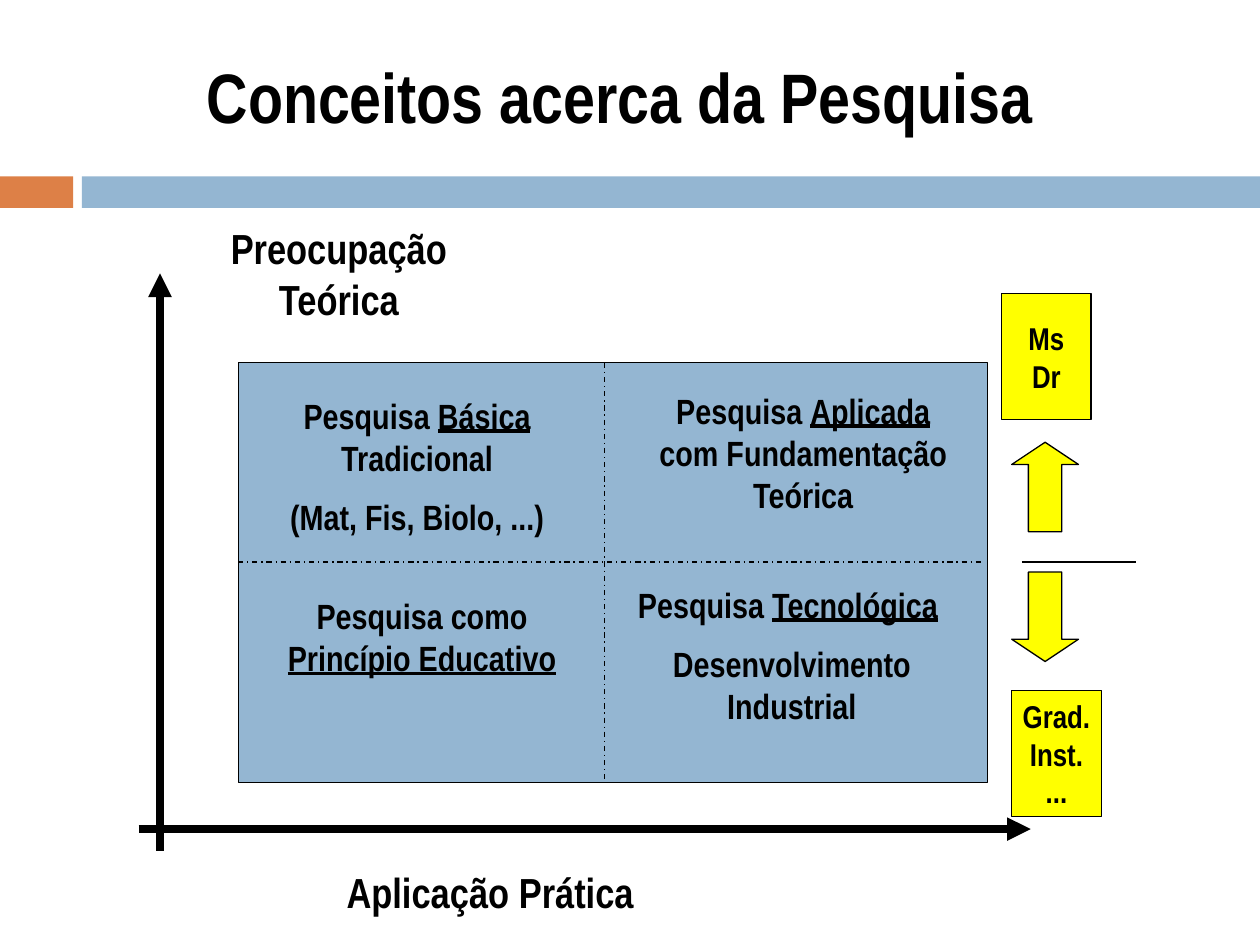
from pptx import Presentation
from pptx.dml.color import RGBColor
from pptx.enum.dml import MSO_LINE
from pptx.enum.shapes import MSO_CONNECTOR, MSO_SHAPE as SHAPE
from pptx.enum.text import MSO_ANCHOR, MSO_AUTO_SIZE, PP_ALIGN
from pptx.oxml.ns import qn
from pptx.util import Inches, Pt
from lxml.etree import SubElement

BLACK = RGBColor(0x00, 0x00, 0x00)
BLUE = RGBColor(0x94, 0xB6, 0xD2)
ORANGE = RGBColor(0xDD, 0x80, 0x47)
YELLOW = RGBColor(0xFF, 0xFF, 0x00)
COLS, ROWS = 100, 75  # the slide's grid


class SlideBuilder:
    """Holds the style and the current slide; lengths are columns and rows."""
    font, thin, thick = "Arial Narrow", 0.75, 4.5

    def __init__(self, prs):
        self.cell_w = prs.slide_width / COLS
        self.cell_h = prs.slide_height / ROWS
        self.slide = prs.slides.add_slide(prs.slide_layouts[5])
        self.shapes = self.slide.shapes

    def grid(self, *lengths):
        """Turn alternating columns and rows into slide lengths."""
        units = (self.cell_w, self.cell_h)
        return [round(n * units[i % 2]) for i, n in enumerate(lengths)]

    def fill_text(self, tf, paragraphs, size, align=PP_ALIGN.CENTER, gap=0):
        """Fill a text frame; text between underscores is underlined."""
        for i, text in enumerate(paragraphs):
            p = tf.add_paragraph() if i else tf.paragraphs[0]
            p.alignment = align
            p.space_before = Pt(gap if i else 0)
            p.font.name, p.font.size, p.font.bold = self.font, Pt(size), True
            p.font.color.rgb = BLACK
            for j, part in enumerate(text.split("_")):
                if part:
                    r = p.add_run()
                    r.text = part
                    if j % 2:
                        r.font.underline = True

    def title(self, text, *box):
        sp = self.shapes.title
        sp.left, sp.top, sp.width, sp.height = self.grid(*box)
        tf = sp.text_frame
        tf.auto_size = MSO_AUTO_SIZE.NONE
        tf.vertical_anchor = MSO_ANCHOR.MIDDLE
        self.fill_text(tf, [text], 40, PP_ALIGN.LEFT)

    def shape(self, kind, fill, *box, outlined=True, lines=()):
        sp = self.shapes.add_shape(kind, *self.grid(*box))
        sp.shadow.inherit = False
        sp.fill.solid()
        sp.fill.fore_color.rgb = fill
        if outlined:
            sp.line.color.rgb = BLACK
            sp.line.width = Pt(self.thin)
        else:
            sp.line.fill.background()
        if lines:
            tf = sp.text_frame
            tf.word_wrap = False
            tf.vertical_anchor = MSO_ANCHOR.MIDDLE
            self.fill_text(tf, lines, 18)
        return sp

    def block_arrow(self, kind, *box):
        sp = self.shape(kind, YELLOW, *box)
        sp.adjustments[0], sp.adjustments[1] = 0.5, 0.333

    def label(self, paragraphs, size, *box):
        sp = self.shapes.add_textbox(*self.grid(*box))
        tf = sp.text_frame
        tf.word_wrap = True
        self.fill_text(tf, paragraphs, size, gap=size / 2)

    def line(self, *ends, dashed=False, axis=False):
        cn = self.shapes.add_connector(MSO_CONNECTOR.STRAIGHT, *self.grid(*ends))
        cn.line.color.rgb = BLACK
        cn.line.width = Pt(self.thick if axis else self.thin)
        if dashed:
            cn.line.dash_style = MSO_LINE.DASH_DOT
        if axis:
            SubElement(cn.get_or_add_ln(), qn("a:tailEnd"), type="triangle")
        SubElement(cn._element.spPr, qn("a:effectLst"))


def main():
    prs = Presentation()
    prs.slide_width, prs.slide_height = Inches(10), Inches(7.5)
    s = SlideBuilder(prs)

    # Title and the band below it
    s.title("Conceitos acerca da Pesquisa", 15.4, 1.3, 77.4, 12.5)
    s.shape(SHAPE.RECTANGLE, ORANGE, 0, 14, 5.8, 2.5, outlined=False)
    s.shape(SHAPE.RECTANGLE, BLUE, 6.5, 14, 93.5, 2.5, outlined=False)

    # Matrix and its dividers
    left, top, width, height = 18.9, 28.8, 59.5, 33.3
    mid_x, mid_y = 48, 44.6
    s.shape(SHAPE.RECTANGLE, BLUE, left, top, width, height)
    s.line(mid_x, top, mid_x, top + height, dashed=True)
    s.line(left, mid_y, 78, mid_y, dashed=True)

    # Axes and their names
    s.line(11, 65.8, 81.8, 65.8, axis=True)
    s.line(12.7, 67.5, 12.7, 21.7, axis=True)
    s.label(["Aplicação Prática"], 24, 6, 68.3, 65.8, 5)
    s.label(["Preocupação Teórica"], 24, 15.2, 17.2, 23.4, 9.1)

    # Quadrants
    quadrants = [
        (["Pesquisa _Básica_ Tradicional", "(Mat, Fis, Biolo, ...)"],
         (19.7, 30.8, 26.8, 12.7)),
        (["Pesquisa _Aplicada_ com Fundamentação Teórica"],
         (50.4, 30.4, 26.7, 11.1)),
        (["Pesquisa como _Princípio Educativo_"], (21, 46.7, 25, 7.7)),
        (["Pesquisa _Tecnológica_ ", "Desenvolvimento Industrial"],
         (49.6, 45.8, 26.5, 12.8)),
    ]
    for paragraphs, box in quadrants:
        s.label(paragraphs, 20, *box)

    # Academic levels above and below the middle line
    s.line(81.1, mid_y, 90.2, mid_y)
    s.shape(SHAPE.RECTANGLE, YELLOW, 79.5, 23.3, 7.1, 10, lines=["Ms", "Dr"])
    s.block_arrow(SHAPE.UP_ARROW, 80.3, 35.1, 5.3, 7.1)
    s.block_arrow(SHAPE.DOWN_ARROW, 80.3, 45.4, 5.3, 7.1)
    s.shape(SHAPE.RECTANGLE, YELLOW, 80.3, 54.8, 7.1, 10,
            lines=["Grad.", "Inst.", "..."])

    prs.save("out.pptx")


if __name__ == "__main__":
    main()
